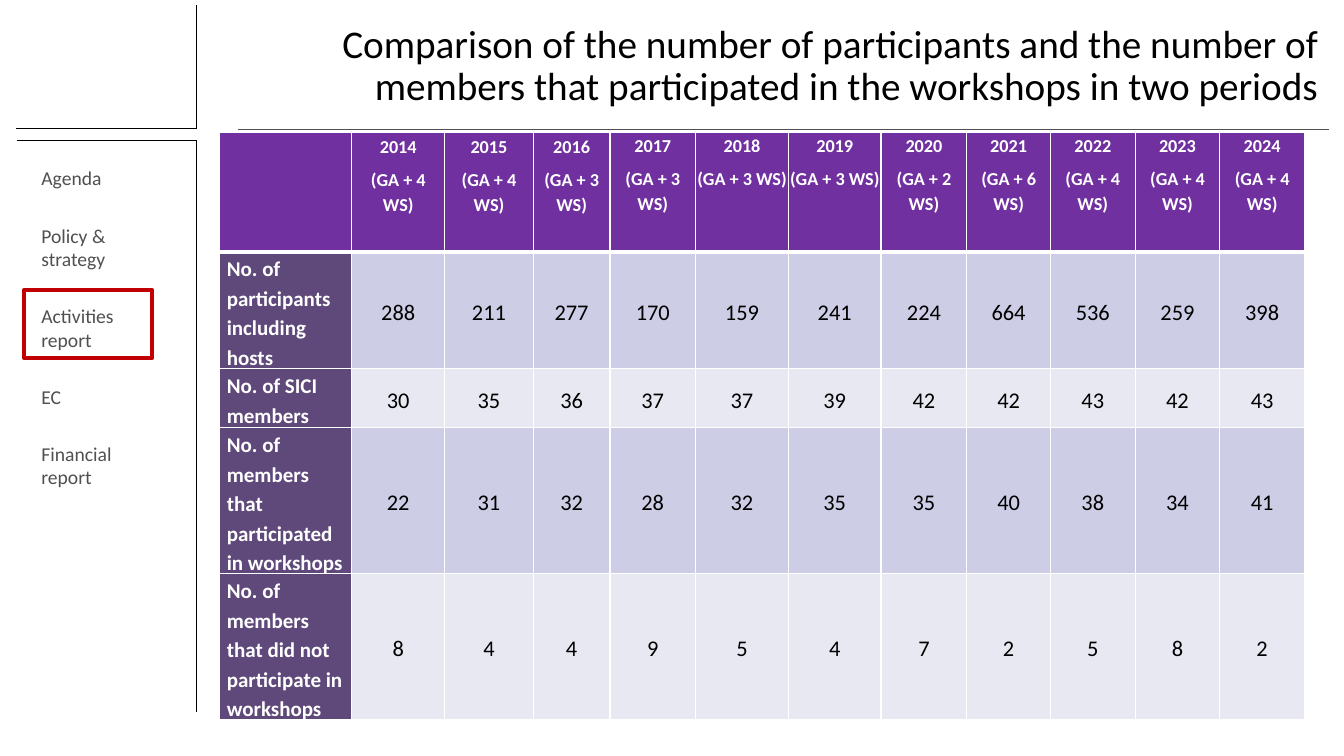
"""Builds the slide comparing workshop participation from 2014 to 2024."""
from dataclasses import dataclass

import lxml.etree
import pptx
import pptx.dml.color
import pptx.enum.shapes
import pptx.enum.text
import pptx.oxml.ns
import pptx.util

Inches = pptx.util.Inches
Pt = pptx.util.Pt
PP_ALIGN = pptx.enum.text.PP_ALIGN
MSO_ANCHOR = pptx.enum.text.MSO_ANCHOR
MSO_AUTO_SIZE = pptx.enum.text.MSO_AUTO_SIZE
qn = pptx.oxml.ns.qn

FONT = "Calibri"
BLACK, WHITE, GREY, RED = "000000", "FFFFFF", "505050", "C00000"
HEADER_FILL, LABEL_FILL = "7030A0", "5F497A"
BAND_FILLS = ("CDCDE6", "E8E8F3")

TITLE = ("Comparison of the number of participants and the number of members "
         "that participated in the workshops in two periods")
AGENDA = ("Agenda", "Policy & strategy", "Activities report", "EC", "Financial report")


@dataclass
class Rule:
    x1: float
    y1: float
    x2: float
    y2: float
    color: str = BLACK


@dataclass
class Measure:
    label: str
    values: tuple[int, ...]
    height: float


@dataclass
class Style:
    size: int
    color: str
    bold: bool = False
    align: PP_ALIGN = PP_ALIGN.LEFT
    anchor: MSO_ANCHOR = MSO_ANCHOR.TOP


RULES = (
    Rule(1.95, 1.39, 1.95, 7.06),
    Rule(0.17, 1.39, 1.95, 1.39),
    Rule(0.16, 1.27, 1.95, 1.27),
    Rule(1.95, 0.05, 1.95, 1.28),
    Rule(2.36, 1.28, 13.18, 1.28, GREY),
)
FIRST_YEAR = 2014
WORKSHOPS = (4, 4, 3, 3, 3, 3, 2, 6, 4, 4, 4)
MEASURES = (
    Measure("No. of participants including hosts",
            (288, 211, 277, 170, 159, 241, 224, 664, 536, 259, 398), 1.01),
    Measure("No. of SICI members",
            (30, 35, 36, 37, 37, 39, 42, 42, 43, 42, 43), 0.51),
    Measure("No. of members that participated in workshops",
            (22, 31, 32, 28, 32, 35, 35, 40, 38, 34, 41), 1.01),
    Measure("No. of members that did not participate in workshops",
            (8, 4, 4, 9, 5, 4, 7, 2, 5, 8, 2), 1.01),
)
HEADER_HEIGHT = 1.19
COL_WIDTHS = (1.31, 0.92, 0.88, 0.76, 0.85, 0.92, 0.92, 0.85, 0.83, 0.84, 0.84, 0.84)
PADDED_COLS = 4

HEADER = Style(13, WHITE, True, PP_ALIGN.CENTER)
LABEL = Style(15, WHITE, True)
VALUE = Style(16, BLACK, False, PP_ALIGN.CENTER, MSO_ANCHOR.MIDDLE)


def rgb(color: str) -> pptx.dml.color.RGBColor:
    return pptx.dml.color.RGBColor.from_string(color)


def format_runs(p, size: int, color: str, bold: bool = False) -> None:
    for r in p.runs:
        r.font.name = FONT
        r.font.size = Pt(size)
        r.font.bold = bold
        r.font.color.rgb = rgb(color)


def place(sp, left: float, top: float, width: float, height: float) -> None:
    sp.left, sp.top = Inches(left), Inches(top)
    sp.width, sp.height = Inches(width), Inches(height)


def add_rule(slide, rule: Rule) -> None:
    line = slide.shapes.add_connector(
        pptx.enum.shapes.MSO_CONNECTOR.STRAIGHT,
        Inches(rule.x1), Inches(rule.y1), Inches(rule.x2), Inches(rule.y2))
    line.line.color.rgb = rgb(rule.color)
    line.line.width = Pt(0.5)
    lxml.etree.SubElement(line._element.spPr, qn("a:effectLst"))


def add_title(slide) -> None:
    sp = slide.shapes.title
    place(sp, 2.15, 0.05, 11.02, 1.22)
    tf = sp.text_frame
    tf.text = TITLE
    tf.auto_size = MSO_AUTO_SIZE.NONE
    tf.vertical_anchor = MSO_ANCHOR.MIDDLE
    p = tf.paragraphs[0]
    p.alignment = PP_ALIGN.RIGHT
    p.line_spacing = 0.9
    format_runs(p, 28, BLACK)


def add_agenda(slide) -> None:
    sp = slide.placeholders[1]
    place(sp, 0.31, 1.6, 1.34, 3.9)
    tf = sp.text_frame
    tf.text = "\n".join(AGENDA)
    tf.auto_size = MSO_AUTO_SIZE.SHAPE_TO_FIT_TEXT
    for i, p in enumerate(tf.paragraphs):
        pPr = p._p.get_or_add_pPr()
        pPr.set("marL", "0")
        pPr.set("indent", "0")
        lxml.etree.SubElement(pPr, qn("a:buNone"))
        p.space_before = Pt(12 if i else 0)
        p.space_after = Pt(12)
        format_runs(p, 14, GREY)


def add_highlight(slide) -> None:
    sp = slide.shapes.add_shape(
        pptx.enum.shapes.MSO_SHAPE.RECTANGLE,
        Inches(0.24), Inches(2.88), Inches(1.27), Inches(0.67))
    sp.shadow.inherit = False
    sp.fill.background()
    sp.line.color.rgb = rgb(RED)
    sp.line.width = Pt(3)


def set_borders(cell, top: float, bottom: float) -> None:
    tcPr = cell._tc.get_or_add_tcPr()
    for side, width in (("L", 1), ("R", 1), ("T", top), ("B", bottom)):
        ln = lxml.etree.SubElement(tcPr, qn(f"a:ln{side}"), w=str(Pt(width)))
        fill = lxml.etree.SubElement(ln, qn("a:solidFill"))
        lxml.etree.SubElement(fill, qn("a:srgbClr"), val=WHITE)


def fill_cell(table, row: int, col: int, text: str, fill: str, style: Style) -> None:
    cell = table.cell(row, col)
    set_borders(cell, 3 if row == 1 else 1, 3 if row == 0 else 1)
    cell.fill.solid()
    cell.fill.fore_color.rgb = rgb(fill)
    padded = col < PADDED_COLS
    cell.margin_left = cell.margin_right = Inches(0.07 if padded else 0)
    cell.margin_top = Inches(0.01 if padded else 0)
    cell.margin_bottom = 0
    cell.vertical_anchor = style.anchor
    cell.text_frame.text = text
    for p in cell.text_frame.paragraphs:
        p.alignment = style.align
        p.line_spacing = 1.15
        p.space_after = Pt(5)
        format_runs(p, style.size, style.color, style.bold)


def add_participation_table(slide) -> None:
    heights = (HEADER_HEIGHT, *(m.height for m in MEASURES))
    table = slide.shapes.add_table(
        len(heights), len(COL_WIDTHS), Inches(2.18), Inches(1.31),
        Inches(sum(COL_WIDTHS)), Inches(sum(heights))).table
    for column, width in zip(table.columns, COL_WIDTHS):
        column.width = Inches(width)
    for row, height in zip(table.rows, heights):
        row.height = Inches(height)
    fill_cell(table, 0, 0, "", HEADER_FILL, HEADER)
    for col, count in enumerate(WORKSHOPS, 1):
        text = f"{FIRST_YEAR + col - 1}\n(GA + {count} WS)"
        fill_cell(table, 0, col, text, HEADER_FILL, HEADER)
    for row, measure in enumerate(MEASURES, 1):
        fill_cell(table, row, 0, measure.label, LABEL_FILL, LABEL)
        for col, value in enumerate(measure.values, 1):
            fill_cell(table, row, col, str(value), BAND_FILLS[(row - 1) % 2], VALUE)


def main() -> None:
    prs = pptx.Presentation()
    prs.slide_width, prs.slide_height = Inches(13.33), Inches(7.5)
    slide = prs.slides.add_slide(prs.slide_layouts[1])
    for rule in RULES:
        add_rule(slide, rule)
    add_agenda(slide)
    add_highlight(slide)
    add_title(slide)
    add_participation_table(slide)
    prs.save("out.pptx")


if __name__ == "__main__":
    main()
